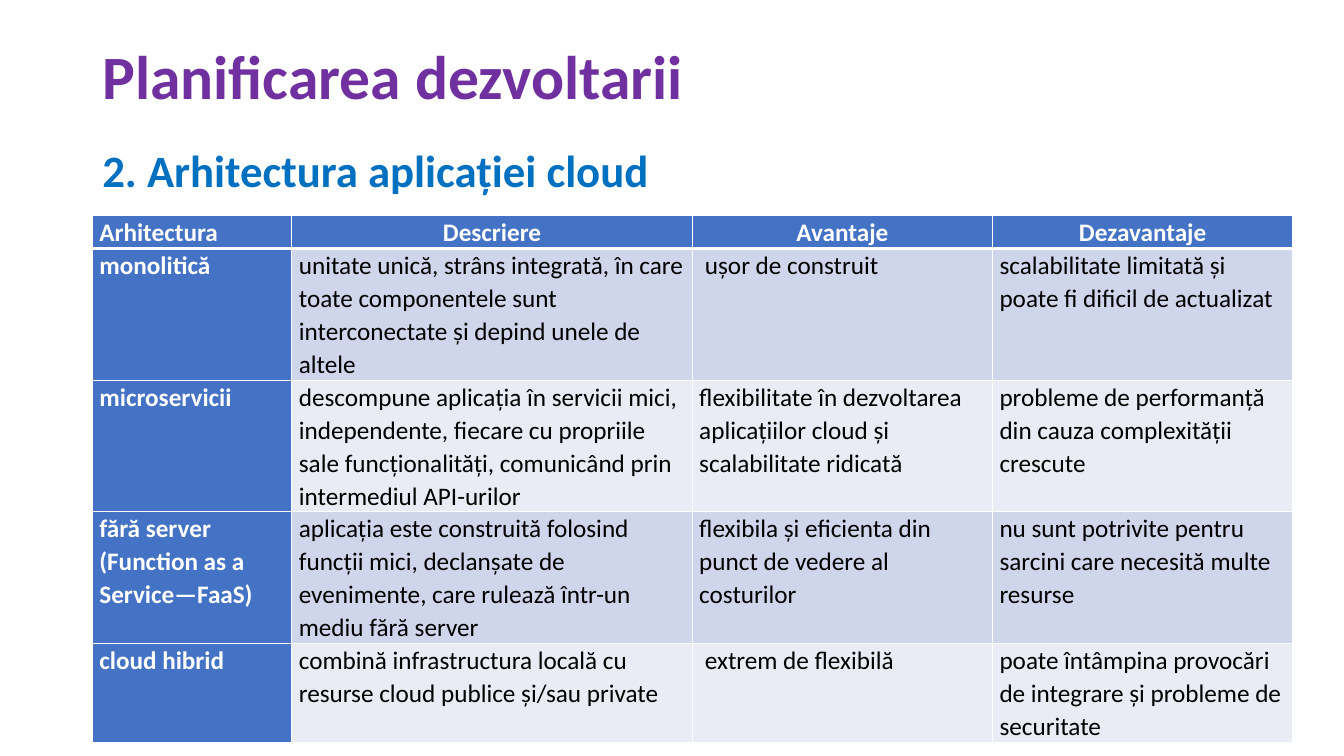
import pptx
import pptx.dml.color
import pptx.enum.text
import pptx.oxml
import pptx.oxml.ns
import pptx.util

Pt = pptx.util.Pt
RGBColor = pptx.dml.color.RGBColor
PP_ALIGN = pptx.enum.text.PP_ALIGN
MSO_ANCHOR = pptx.enum.text.MSO_ANCHOR

PURPLE = RGBColor(0x70, 0x30, 0xA0)
BLUE = RGBColor(0x00, 0x70, 0xC0)
HEADER_BLUE = RGBColor(0x44, 0x72, 0xC4)
BAND_DARK = RGBColor(0xCF, 0xD5, 0xEA)
BAND_LIGHT = RGBColor(0xE9, 0xEB, 0xF5)
WHITE = RGBColor(0xFF, 0xFF, 0xFF)
BLACK = RGBColor(0x00, 0x00, 0x00)

FONT = "Calibri"
LEFT = Pt(66)
TEXT_WIDTH = Pt(828)
COLUMN_WIDTHS = [142.5, 286, 214.5, 214.5]
ROW_HEIGHTS = [23.5, 94, 94, 94, 70.5]

ARCHITECTURES = [
    ["Arhitectura", "Descriere", "Avantaje", "Dezavantaje"],
    ["monolitică",
     "unitate unică, strâns integrată, în care toate componentele sunt "
     "interconectate și depind unele de altele",
     " ușor de construit",
     "scalabilitate limitată și poate fi dificil de actualizat"],
    ["microservicii",
     "descompune aplicația în servicii mici, independente, fiecare cu propriile "
     "sale funcționalități, comunicând prin intermediul API-urilor",
     "flexibilitate în dezvoltarea aplicațiilor cloud și scalabilitate ridicată",
     "probleme de performanță din cauza complexității crescute"],
    ["fără server (Function as a Service—FaaS)",
     "aplicația este construită folosind funcții mici, declanșate de "
     "evenimente, care rulează într-un mediu fără server",
     "flexibila și eficienta din punct de vedere al costurilor",
     "nu sunt potrivite pentru sarcini care necesită multe resurse"],
    ["cloud hibrid",
     "combină infrastructura locală cu resurse cloud publice și/sau private",
     " extrem de flexibilă",
     "poate întâmpina provocări de integrare și probleme de securitate"],
]


def format_paragraph(p, size, color, bold, spacing, align=PP_ALIGN.LEFT):
    p.alignment = align
    p.line_spacing = spacing
    p.font.name = FONT
    p.font.size = Pt(size)
    p.font.bold = bold
    p.font.color.rgb = color


def set_heading(s, text, top, height, size, color, anchor):
    """Place a text shape at the left margin and give it one bold line."""
    s.left, s.top, s.width, s.height = LEFT, Pt(top), TEXT_WIDTH, Pt(height)
    tf = s.text_frame
    tf.word_wrap = True
    tf.auto_size = pptx.enum.text.MSO_AUTO_SIZE.NONE
    tf.vertical_anchor = anchor
    tf.text = text
    format_paragraph(tf.paragraphs[0], size, color, True, 0.9)


def set_borders(cell, top, bottom):
    """Draw white cell borders; top and bottom are widths in points."""
    tc_pr = cell._tc.get_or_add_tcPr()
    widths = {"lnL": 1, "lnR": 1, "lnT": top, "lnB": bottom}
    for i, (side, width) in enumerate(widths.items()):
        tc_pr.insert(i, pptx.oxml.parse_xml(
            f'<a:{side} {pptx.oxml.ns.nsdecls("a")} w="{Pt(width)}">'
            f'<a:solidFill><a:srgbClr val="{WHITE}"/></a:solidFill></a:{side}>'))


def fill_cell(cell, text, row, column):
    is_label = row == 0 or column == 0
    cell.margin_left = cell.margin_right = Pt(5)
    cell.margin_top = cell.margin_bottom = 0
    cell.fill.solid()
    cell.fill.fore_color.rgb = (
        HEADER_BLUE if is_label else BAND_DARK if row % 2 else BAND_LIGHT)
    set_borders(cell, 3 if row == 1 else 1, 3 if row == 0 else 1)
    cell.text = text
    p = cell.text_frame.paragraphs[0]
    align = PP_ALIGN.CENTER if row == 0 and column else PP_ALIGN.LEFT
    format_paragraph(p, 18, WHITE if is_label else BLACK, is_label, 1.07, align)
    p.space_after = Pt(8)


def add_architecture_table(slide):
    table = slide.shapes.add_table(
        len(ROW_HEIGHTS), len(COLUMN_WIDTHS), LEFT, Pt(154),
        Pt(sum(COLUMN_WIDTHS)), Pt(sum(ROW_HEIGHTS))).table
    table.first_col = True
    for column, width in zip(table.columns, COLUMN_WIDTHS):
        column.width = Pt(width)
    for row, height in zip(table.rows, ROW_HEIGHTS):
        row.height = Pt(height)
    for r, texts in enumerate(ARCHITECTURES):
        for c, text in enumerate(texts):
            fill_cell(table.cell(r, c), text, r, c)


def main():
    prs = pptx.Presentation()
    prs.slide_width, prs.slide_height = Pt(960), Pt(540)
    slide = prs.slides.add_slide(prs.slide_layouts[5])
    set_heading(slide.shapes.title, "Planificarea dezvoltarii",
                29, 55, 44, PURPLE, MSO_ANCHOR.MIDDLE)
    subtitle = slide.shapes.add_textbox(0, 0, 0, 0)
    set_heading(subtitle, "2. Arhitectura aplicației cloud",
                103, 46, 32, BLUE, MSO_ANCHOR.TOP)
    add_architecture_table(slide)
    prs.save("out.pptx")


if __name__ == "__main__":
    main()
